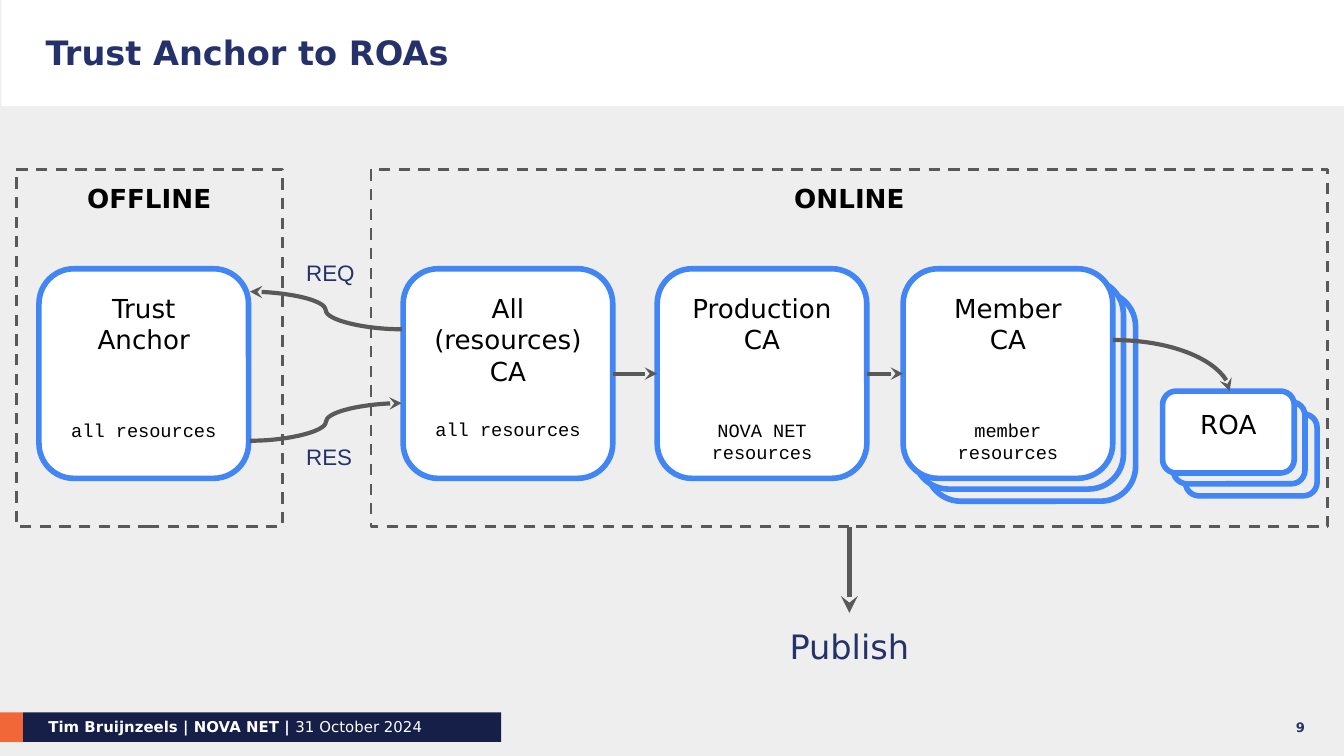
from dataclasses import dataclass

from lxml.etree import SubElement
from pptx import Presentation
from pptx.dml.color import RGBColor
from pptx.enum.dml import MSO_LINE
from pptx.enum.shapes import MSO_CONNECTOR as Route, MSO_SHAPE as Form
from pptx.enum.text import MSO_ANCHOR as Anchor, PP_ALIGN as Align
from pptx.oxml.ns import qn
from pptx.util import Pt

PX = 9144  # one px is a hundredth of an inch
STACK_STEP = 8.5
LABEL_LINE = 17  # points per line of a card label
LABEL_LINES = 4  # label lines above every card note


@dataclass(frozen=True)
class Theme:
    page: str = "EEEEEE"
    white: str = "FFFFFF"
    black: str = "000000"
    navy: str = "25316A"
    footer: str = "151F47"
    accent: str = "F26738"
    card: str = "4285F4"
    grey: str = "595959"
    sans: str = "DejaVu Sans"
    mono: str = "Courier New"
    arial: str = "Arial"
    title_size: int = 18
    label_size: int = 14
    flow_size: int = 12
    note_size: int = 10
    footer_size: int = 8
    number_size: int = 7


THEME = Theme()


@dataclass(frozen=True)
class Area:
    left: int
    top: int
    width: int
    height: int

    def emu(self) -> list:
        return [side * PX for side in (self.left, self.top, self.width, self.height)]


@dataclass(frozen=True)
class Style:
    size: int
    color: str = THEME.navy
    font: str = THEME.sans
    bold: bool = False
    align: Align = Align.CENTER


@dataclass(frozen=True)
class Zone:
    label: str
    area: Area


@dataclass(frozen=True)
class Card:
    area: Area
    label: tuple
    label_lines: int = 1
    note: str = ""
    copies: int = 0


@dataclass(frozen=True)
class Curve:
    start: tuple
    end: tuple
    arrow: str = "tailEnd"
    preset: str = "curvedConnector3"


LABEL = Style(THEME.label_size, THEME.black)
HEADING = Style(THEME.label_size, THEME.black, bold=True)
NOTE = Style(THEME.note_size, THEME.black, THEME.mono)
FLOW = Style(THEME.flow_size, font=THEME.arial, align=Align.LEFT)
TITLE = Style(THEME.title_size, bold=True, align=Align.LEFT)
PUBLISH = Style(THEME.title_size)
FOOTER = Style(THEME.footer_size, THEME.white, align=Align.LEFT)
NUMBER = Style(THEME.number_size, bold=True, align=Align.RIGHT)

ONLINE = Zone("ONLINE", Area(276, 126, 712, 266))
OFFLINE = Zone("OFFLINE", Area(12, 126, 198, 266))


def authority(left: int, label: tuple, lines: int, note: str, copies: int = 0) -> Card:
    """Describe one of the square cards, which share a row."""
    return Card(Area(left, 200, 156, 156), label, lines, note, copies)


TRUST_ANCHOR = authority(29, ("Trust Anchor",), 2, "all resources")
ALL_RESOURCES = authority(300, ("All (resources) CA",), 3, "all resources")
PRODUCTION = authority(489, ("Production", "CA"), 2, "NOVA NET resources")
MEMBER = authority(672, ("Member", "CA"), 2, "member resources", 2)
ROA = Card(Area(865, 291, 98, 61), ("ROA",), copies=2)

CURVES = (
    Curve((186, 217), (299, 245), arrow="headEnd"),
    Curve((186, 328), (299, 300)),
    Curve((828, 253), (915, 291), preset="curvedConnector2"),
)


def rgb(color: str) -> RGBColor:
    return RGBColor.from_string(color)


def set_font(font, style: Style) -> None:
    font.size, font.name, font.bold = Pt(style.size), style.font, style.bold
    font.color.rgb = rgb(style.color)


def write(box, lines: list, inset: int = 10, anchor: Anchor = Anchor.TOP) -> None:
    """Fill a shape with one paragraph per (text, style) pair."""
    frame = box.text_frame
    frame.word_wrap, frame.vertical_anchor = True, anchor
    frame.margin_left = frame.margin_right = inset * PX
    frame.margin_top = frame.margin_bottom = inset * PX
    for index, (text, style) in enumerate(lines):
        para = frame.add_paragraph() if index else frame.paragraphs[0]
        para.text, para.alignment = text, style.align
        set_font(para.font, style)


def draw_shape(page, form: Form, area: Area, fill: str, line: str = "", width: float = 0):
    shape = page.shapes.add_shape(form, *area.emu())
    shape.shadow.inherit = False
    shape.fill.solid()
    shape.fill.fore_color.rgb = rgb(fill)
    if line:
        shape.line.color.rgb, shape.line.width = rgb(line), Pt(width)
    else:
        shape.line.fill.background()
    return shape


def draw_text(page, area: Area, text: str, style: Style, **layout):
    box = page.shapes.add_textbox(*area.emu())
    write(box, [(text, style)], **layout)
    return box


def draw_zone(page, zone: Zone):
    box = draw_shape(page, Form.RECTANGLE, zone.area, THEME.page, THEME.grey, 1.5)
    box.line.dash_style = MSO_LINE.DASH
    write(box, [(zone.label, HEADING)])
    return box


def draw_card(page, card: Card):
    """Draw a card in front of its stacked copies."""
    area = card.area
    for depth in range(card.copies, -1, -1):
        shift = int(depth * STACK_STEP)
        place = Area(area.left + shift, area.top + shift, area.width, area.height)
        fill = THEME.page if depth else THEME.white
        box = draw_shape(page, Form.ROUNDED_RECTANGLE, place, fill, THEME.card, 3)
    lines = [(text, LABEL) for text in card.label]
    if card.note:
        lines.append((card.note, NOTE))
    write(box, lines)
    if card.note:
        gap = LABEL_LINE * (LABEL_LINES - card.label_lines)
        box.text_frame.paragraphs[-1].space_before = Pt(gap)
    return box


def draw_arrow(page, curve: Curve, route: Route = Route.CURVE, width: float = 2.25):
    ends = [length * PX for length in curve.start + curve.end]
    arrow = page.shapes.add_connector(route, *ends)
    arrow.line.color.rgb, arrow.line.width = rgb(THEME.grey), Pt(width)
    properties = arrow._element.spPr
    if route == Route.CURVE:
        properties.find(qn("a:prstGeom")).set("prst", curve.preset)
    SubElement(properties.find(qn("a:ln")), qn(f"a:{curve.arrow}"), type="stealth")
    SubElement(properties, qn("a:effectLst"))
    return arrow


def join(page, source, source_side: int, target, target_side: int, **look) -> None:
    arrow = draw_arrow(page, Curve((0, 0), (0, 0)), **look)
    arrow.begin_connect(source, source_side)
    arrow.end_connect(target, target_side)


def draw_frame(page) -> None:
    """Draw the title band, the footer and the page number."""
    draw_shape(page, Form.RECTANGLE, Area(1, 0, 1000, 79), THEME.white)
    draw_shape(page, Form.RECTANGLE, Area(17, 530, 356, 22), THEME.footer)
    draw_shape(page, Form.RECTANGLE, Area(0, 530, 17, 22), THEME.accent)
    draw_text(page, Area(34, 24, 842, 30), "Trust Anchor to ROAs", TITLE, inset=0)
    author = "Tim Bruijnzeels | NOVA NET | "
    footer = draw_text(page, Area(36, 534, 327, 17), author, FOOTER, inset=0)
    para = footer.text_frame.paragraphs[0]
    para.runs[0].font.bold = True
    para.add_run().text = "31 October 2024"
    draw_text(page, Area(911, 520, 60, 43), "9", NUMBER, inset=0, anchor=Anchor.MIDDLE)


def main() -> None:
    deck = Presentation()
    deck.slide_width = 1000 * PX
    deck.slide_height = deck.slide_width * 9 // 16
    page = deck.slides.add_slide(deck.slide_layouts[6])
    page.background.fill.solid()
    page.background.fill.fore_color.rgb = rgb(THEME.page)

    draw_frame(page)
    online, _ = [draw_zone(page, zone) for zone in (ONLINE, OFFLINE)]
    cards = (TRUST_ANCHOR, ALL_RESOURCES, PRODUCTION, MEMBER, ROA)
    _, resources, production, member, _ = [draw_card(page, card) for card in cards]
    for curve in CURVES:
        draw_arrow(page, curve)
    for source, target in ((resources, production), (production, member)):
        join(page, source, 3, target, 1)
    for text, top in (("REQ", 183), ("RES", 320)):
        draw_text(page, Area(218, top, 76, 40), text, FLOW)
    publish = draw_text(page, Area(563, 456, 138, 50), "Publish", PUBLISH)
    join(page, online, 2, publish, 0, route=Route.STRAIGHT, width=3)
    deck.save("out.pptx")


if __name__ == "__main__":
    main()
